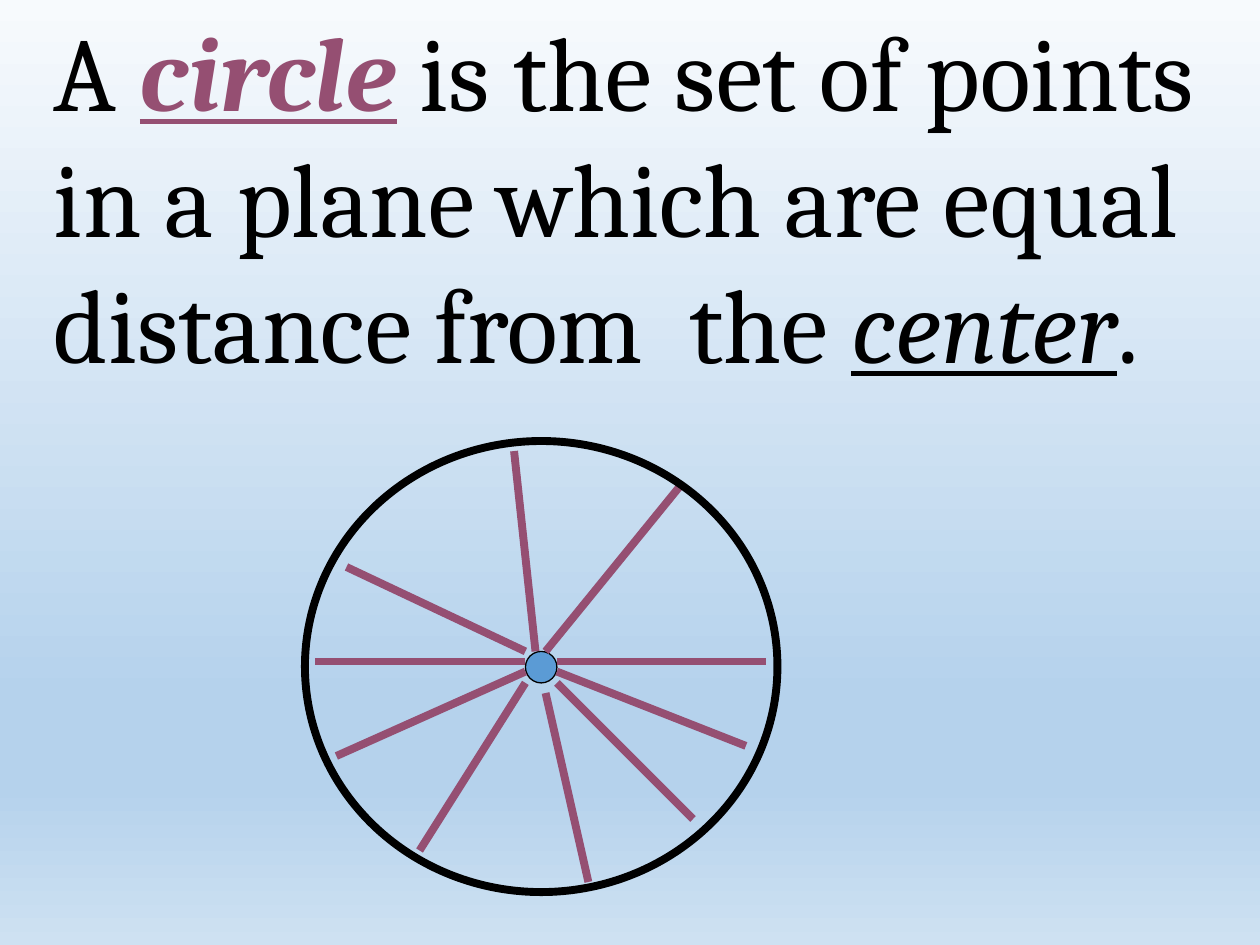
import pptx
import pptx.dml.color
import pptx.enum.shapes
import pptx.enum.text
import pptx.oxml
import pptx.oxml.ns
import pptx.util
from pptx.util import Inches

BLACK, PLUM, BLUE = "000000", "954F72", "5B9BD5"
SKY = [(0, "F7FAFD"), (74, "B5D2EC"), (83, "B5D2EC"), (100, "CEE1F2")]
DEFINITION = [
    [("A ", {}),
     ("circle", {"color": PLUM, "bold": True, "italic": True, "underline": True}),
     (" is the set of points", {})],
    [("in a plane which are equal", {})],
    [("distance from  the ", {}),
     ("center", {"italic": True, "underline": True}),
     (".", {})],
]
CENTER_DOT = (4.17, 5.17, 0.25, 0.25)
CIRCLE = (2.42, 3.5, 3.75, 3.58)
RADII = [
    ((4.42, 5.25), (6.08, 5.25)),
    ((4.42, 5.33), (5.92, 5.92)),
    ((4.42, 5.42), (5.5, 6.5)),
    ((4.33, 5.5), (4.67, 7)),
    ((4.17, 5.42), (3.33, 6.75)),
    ((4.17, 5.33), (2.67, 6)),
    ((4.17, 5.25), (2.5, 5.25)),
    ((4.17, 5.17), (2.75, 4.5)),
    ((4.25, 5.17), (4.08, 3.58)),
    ((4.33, 5.17), (5.42, 3.83)),
]


def rgb(value):
    return pptx.dml.color.RGBColor.from_string(value)


def add_run(paragraph, text, size=60, font="Cambria", color=BLACK,
            bold=False, italic=False, underline=False):
    run = paragraph.add_run()
    run.text = text
    run.font.name = font
    run.font.size = pptx.util.Pt(size)
    run.font.color.rgb = rgb(color)
    run.font.bold = bold
    run.font.italic = italic
    run.font.underline = underline


def paint_background(slide, stops):
    fill = slide.background.fill
    fill.gradient()
    fill.gradient_angle = 270
    stop_list = next(slide.element.iter(pptx.oxml.ns.qn("a:gsLst")))
    for stop in list(stop_list):
        stop_list.remove(stop)
    for percent, color in stops:
        stop_list.append(pptx.oxml.parse_xml(
            f'<a:gs {pptx.oxml.ns.nsdecls("a")} pos="{percent * 1000}">'
            f'<a:srgbClr val="{color}"/></a:gs>'))


def style_line(line, color, width):
    line.color.rgb = rgb(color)
    line.width = pptx.util.Pt(width)


def add_definition(slide, paragraphs):
    box = slide.shapes.add_textbox(*map(Inches, (0.33, 0, 9.39, 3.1)))
    frame = box.text_frame
    frame.word_wrap = False
    frame.auto_size = pptx.enum.text.MSO_AUTO_SIZE.SHAPE_TO_FIT_TEXT
    for index, runs in enumerate(paragraphs):
        paragraph = frame.add_paragraph() if index else frame.paragraphs[0]
        for text, style in runs:
            add_run(paragraph, text, **style)


def add_ellipse(slide, bounds, width, fill=None):
    shape = slide.shapes.add_shape(
        pptx.enum.shapes.MSO_SHAPE.OVAL, *map(Inches, bounds))
    shape.shadow.inherit = False
    if fill:
        shape.fill.solid()
        shape.fill.fore_color.rgb = rgb(fill)
    else:
        shape.fill.background()
    style_line(shape.line, BLACK, width)


def add_radius(slide, start, end):
    connector = slide.shapes.add_connector(
        pptx.enum.shapes.MSO_CONNECTOR.STRAIGHT, *map(Inches, start + end))
    style_line(connector.line, PLUM, 4.5)
    connector.element.spPr.append(pptx.oxml.parse_xml(
        f'<a:effectLst {pptx.oxml.ns.nsdecls("a")}/>'))


def main():
    presentation = pptx.Presentation()
    presentation.slide_width = Inches(10)
    presentation.slide_height = Inches(7.5)
    slide = presentation.slides.add_slide(presentation.slide_layouts[6])
    paint_background(slide, SKY)
    add_definition(slide, DEFINITION)
    add_ellipse(slide, CENTER_DOT, 0.75, BLUE)
    for start, end in RADII:
        add_radius(slide, start, end)
    add_ellipse(slide, CIRCLE, 4.5)
    presentation.save("out.pptx")


if __name__ == "__main__":
    main()
